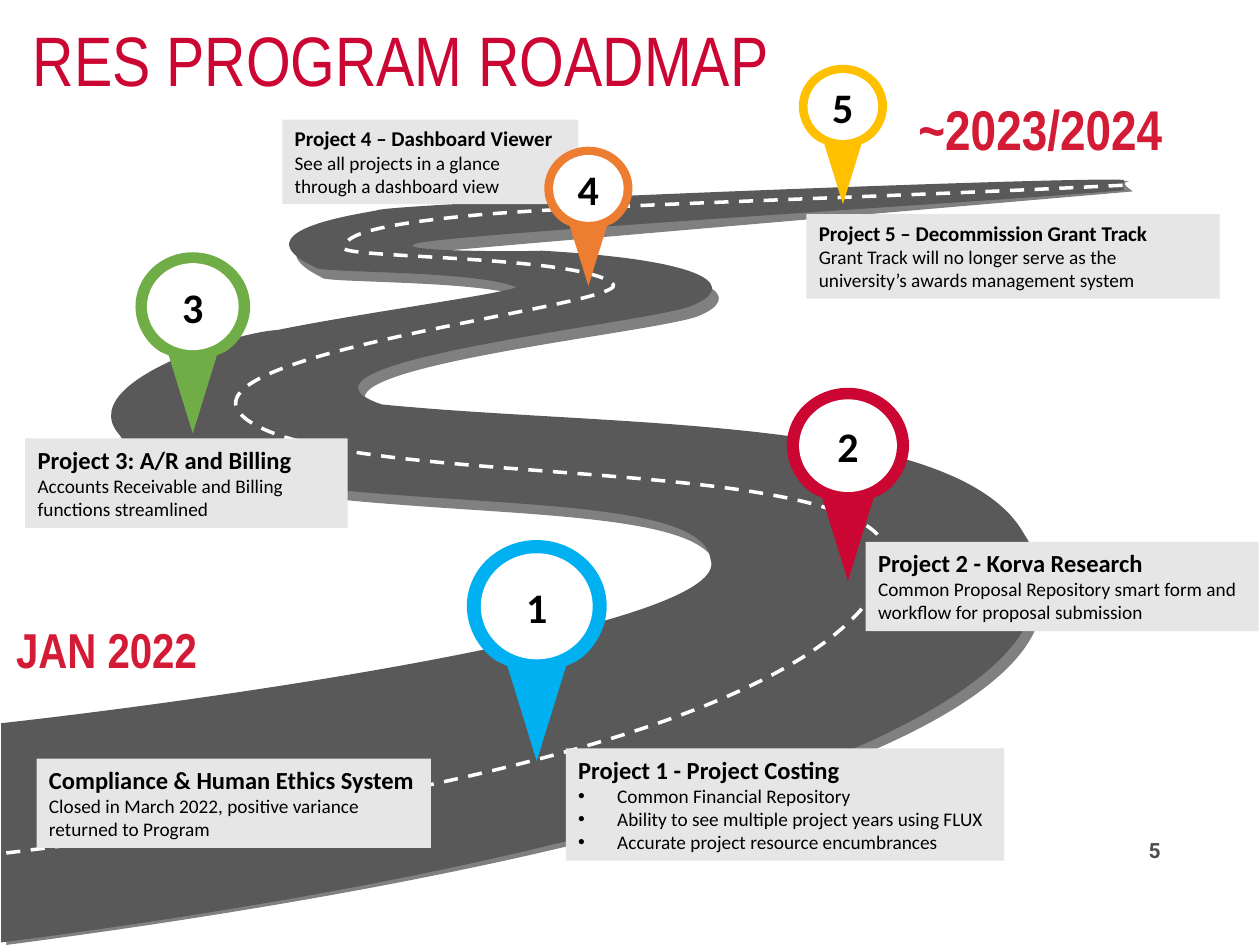
"""Build the RES program roadmap slide on a grid of 1000 by 750 cells."""
from lxml.etree import SubElement
from pptx import Presentation
from pptx.dml.color import RGBColor
from pptx.enum.dml import MSO_LINE_DASH_STYLE as Dash
from pptx.enum.shapes import MSO_SHAPE as Shape
from pptx.enum.text import MSO_ANCHOR as Anchor, MSO_AUTO_SIZE as AutoSize, PP_ALIGN as Align
from pptx.oxml.ns import qn
from pptx.util import Inches, Pt

WHITE = RGBColor(0xFF, 0xFF, 0xFF)
BLACK = RGBColor(0, 0, 0)
ASPHALT = RGBColor(0x59, 0x59, 0x59)
EDGE = RGBColor(0x80, 0x80, 0x80)
CARD = RGBColor(0xE7, 0xE6, 0xE6)
CRIMSON = RGBColor(0xCC, 0x06, 0x33)
DATE_RED = RGBColor(0xD4, 0x1B, 0x35)
NUMBER_GREY = RGBColor(0x4D, 0x4D, 0x4C)
SKY = RGBColor(0x00, 0xB0, 0xF0)
GREEN = RGBColor(0x70, 0xAD, 0x47)
ORANGE = RGBColor(0xED, 0x7D, 0x31)
AMBER = RGBColor(0xFF, 0xC0, 0x00)

SLIDE_W, SLIDE_H = Inches(10), Inches(7.5)
CELL = SLIDE_W / 1000

TITLE = ("RES PROGRAM ROADMAP", (16, 14, 862, 74),
         dict(size=Pt(40), name="Arial Narrow", bold=False), CRIMSON)
LABELS = [
    ("JAN 2022", (3, 487, 167, 57), dict(size=Pt(28), name="Arial Narrow", bold=True),
     DATE_RED, Align.LEFT, Anchor.TOP),
    ("~2023/2024", (719, 70, 245, 64), dict(size=Pt(32), name="Arial Narrow", bold=True),
     DATE_RED, Align.LEFT, Anchor.TOP),
    ("5", (660, 655, 271, 40), dict(size=Pt(12), name="Roboto", bold=True),
     NUMBER_GREY, Align.RIGHT, Anchor.MIDDLE),
]
CARDS = [
    ("Project 1 - Project Costing", 14, (449, 594, 348, 89),
     ["Common Financial Repository", "Ability to see multiple project years using FLUX",
      "Accurate project resource encumbrances"]),
    ("Project 2 - Korva Research", 14, (687, 430, 312, 71),
     ["Common Proposal Repository smart form and workflow for proposal submission"]),
    ("Project 3: A/R and Billing", 14, (20, 348, 256, 71),
     ["Accounts Receivable and Billing functions streamlined"]),
    ("Project 4 – Dashboard Viewer", 12, (224, 95, 235, 67),
     ["See all projects in a glance through a dashboard view"]),
    ("Project 5 – Decommission Grant Track", 12, (640, 170, 328, 67),
     ["Grant Track will no longer serve as the university’s awards management system"]),
    ("Compliance & Human Ethics System", 14, (29, 602, 313, 71),
     ["Closed in March 2022, positive variance returned to Program"]),
]
PINS = [("1", SKY, (426, 604), 111), ("2", CRIMSON, (673, 461), 97),
        ("3", GREEN, (153, 344), 91), ("4", ORANGE, (467, 227), 70),
        ("5", AMBER, (669, 162), 70)]
PIN_ASPECT = 1.58
PIN_HOLE = (0.1, 0.06, 0.8, 0.48)

# Six numbers make a curve, two make a straight line.
ROAD_EDGE = [
    (7, 582), (212, 559, 588, 502, 569, 452), (562, 390, 282, 420, 127, 371),
    (23, 323, 193, 271, 225, 270), (289, 257, 401, 241, 416, 236),
    (383, 222, 252, 225, 255, 220), (194, 190, 291, 178, 305, 175),
    (316, 168, 889, 140, 896, 144), (889, 145, 894, 148, 899, 152), (342, 200),
    (302, 207, 403, 208, 436, 207), (577, 215, 589, 237, 554, 251),
    (518, 265, 212, 295, 308, 329), (530, 351, 872, 332, 822, 499),
    (784, 588, 523, 682, 5, 750)]
ROAD = [
    (1, 574), (206, 551, 583, 494, 564, 444), (557, 382, 277, 412, 122, 363),
    (17, 315, 187, 263, 220, 262), (283, 249, 395, 234, 410, 228),
    (377, 214, 246, 217, 250, 212), (188, 183, 285, 170, 299, 167),
    (310, 161, 886, 139, 892, 143), (892, 147, 891, 146, 892, 151),
    (800, 159, 403, 183, 337, 192), (296, 199, 398, 200, 430, 199),
    (572, 207, 584, 229, 548, 243), (512, 257, 206, 288, 303, 321),
    (525, 343, 867, 324, 817, 491), (778, 580, 519, 681, 1, 748)]
LANE = [
    (5, 677), (389, 630, 652, 560, 701, 458), (750, 356, 305, 392, 204, 338),
    (102, 284, 495, 244, 487, 226), (467, 203, 273, 205, 273, 197),
    (274, 189, 283, 179, 386, 170), (489, 162, 692, 157, 892, 147)]
PIN = [(0.5, 0), (0.77, 0, 1, 0.13, 1, 0.3), (1, 0.4, 0.91, 0.5, 0.78, 0.55),
       (0.71, 0.57), (0.5, 1), (0.29, 0.57), (0.22, 0.55),
       (0.09, 0.5, 0, 0.4, 0, 0.3), (0, 0.13, 0.23, 0, 0.5, 0)]


def cells(values):
    return [round(value * CELL) for value in values]


def pairs(segment):
    return list(zip(segment[::2], segment[1::2]))


def trace(outline, steps=24):
    points = [outline[0]]
    for segment in outline[1:]:
        if len(segment) == 2:
            points.append(segment)
            continue
        corners = [points[-1], *pairs(segment)]
        for step in range(1, steps + 1):
            t = step / steps
            weights = ((1 - t) ** 3, 3 * t * (1 - t) ** 2, 3 * t * t * (1 - t), t ** 3)
            points.append(tuple(sum(w * c[axis] for w, c in zip(weights, corners))
                                for axis in (0, 1)))
    return points


def add_outline(shapes, outline, close=True):
    """Size a freeform by its traced extent, then draw it with true curves."""
    start, *rest = [cells(point) for point in trace(outline)]
    builder = shapes.build_freeform(*start)
    builder.add_line_segments(rest, close=close)
    shape = builder.convert_to_shape()
    drawing = shape._element.find(".//" + qn("a:path"))
    for child in list(drawing):
        drawing.remove(child)
    for index, segment in enumerate(outline):
        tag = "a:moveTo" if index == 0 else "a:lnTo" if len(segment) == 2 else "a:cubicBezTo"
        command = SubElement(drawing, qn(tag))
        for x, y in pairs(cells(segment)):
            point = SubElement(command, qn("a:pt"))
            point.set("x", str(x - shape.left))
            point.set("y", str(y - shape.top))
    if close:
        SubElement(drawing, qn("a:close"))
    return shape


def paint(item, color):
    item.shadow.inherit = False
    item.fill.solid()
    item.fill.fore_color.rgb = color
    item.line.fill.background()


def write(paragraph, text, font, color, align=Align.LEFT):
    paragraph.alignment = align
    run = paragraph.add_run()
    run.text = text
    for key, value in font.items():
        setattr(run.font, key, value)
    run.font.color.rgb = color


def add_bullet(paragraph):
    properties = paragraph._p.get_or_add_pPr()
    properties.set("marL", str(Inches(0.31)))
    properties.set("indent", str(-Inches(0.31)))
    SubElement(properties, qn("a:buFont")).set("typeface", "Arial")
    SubElement(properties, qn("a:buChar")).set("char", "•")


def add_road(shapes):
    for outline, color in ((ROAD_EDGE, EDGE), (ROAD, ASPHALT)):
        paint(add_outline(shapes, outline), color)
    lane = add_outline(shapes, LANE, close=False)
    lane.shadow.inherit = False
    lane.fill.background()
    lane.line.color.rgb = WHITE
    lane.line.width = Pt(2)
    lane.line.dash_style = Dash.DASH


def add_card(shapes, heading, size, box, details):
    card = shapes.add_shape(Shape.RECTANGLE, *cells(box))
    paint(card, CARD)
    frame = card.text_frame
    frame.word_wrap, frame.vertical_anchor = True, Anchor.TOP
    write(frame.paragraphs[0], heading, dict(size=Pt(size), name="Calibri", bold=True), BLACK)
    for detail in details:
        paragraph = frame.add_paragraph()
        if len(details) > 1:
            add_bullet(paragraph)
        write(paragraph, detail, dict(size=Pt(11), name="Calibri", bold=False), BLACK)


def add_pin(shapes, number, color, tip, width):
    height = width * PIN_ASPECT
    left, top = tip[0] - width / 2, tip[1] - height
    outline = [[value for x, y in pairs(segment)
                for value in (left + x * width, top + y * height)] for segment in PIN]
    paint(add_outline(shapes, outline), color)
    x, y, w, h = PIN_HOLE
    hole = shapes.add_shape(Shape.OVAL, *cells(
        (left + x * width, top + y * height, w * width, h * height)))
    paint(hole, WHITE)
    frame = hole.text_frame
    frame.margin_left = frame.margin_right = frame.margin_top = frame.margin_bottom = 0
    frame.vertical_anchor = Anchor.MIDDLE
    write(frame.paragraphs[0], number, dict(size=Pt(24), name="Calibri", bold=True),
          BLACK, Align.CENTER)


def add_title(title):
    text, box, font, color = TITLE
    title.left, title.top, title.width, title.height = cells(box)
    frame = title.text_frame
    frame.auto_size, frame.vertical_anchor = AutoSize.NONE, Anchor.MIDDLE
    frame.paragraphs[0].line_spacing = 0.9
    write(frame.paragraphs[0], text, font, color)


def add_label(shapes, text, box, font, color, align, anchor):
    frame = shapes.add_textbox(*cells(box)).text_frame
    frame.word_wrap, frame.vertical_anchor = True, anchor
    write(frame.paragraphs[0], text, font, color, align)


def main():
    deck = Presentation()
    deck.slide_width, deck.slide_height = SLIDE_W, SLIDE_H
    shapes = deck.slides.add_slide(deck.slide_layouts[5]).shapes
    add_title(shapes.title)
    add_road(shapes)
    for adder, parts in ((add_card, CARDS), (add_pin, PINS), (add_label, LABELS)):
        for part in parts:
            adder(shapes, *part)
    deck.save("out.pptx")


if __name__ == "__main__":
    main()
